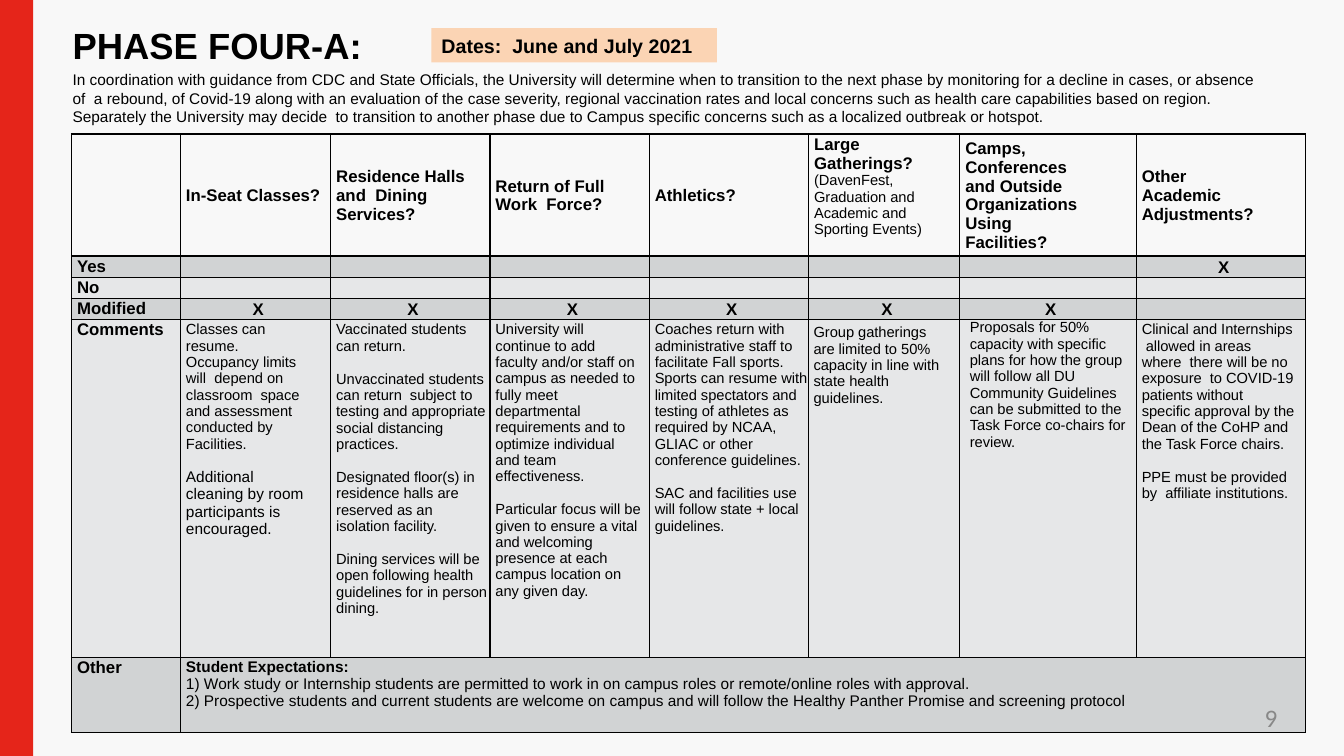
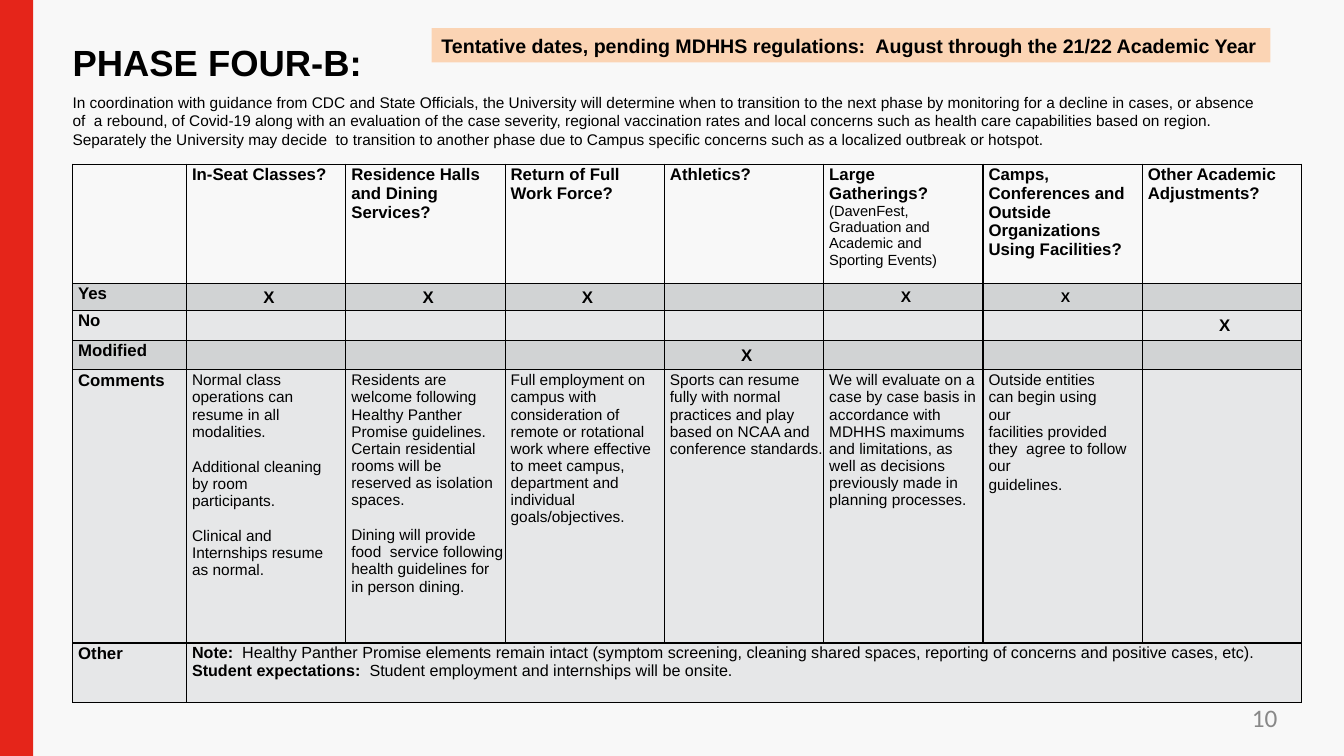
from dataclasses import dataclass

from lxml import etree
from pptx import Presentation
from pptx.dml.color import RGBColor
from pptx.enum import shapes, text
from pptx.oxml.ns import qn
from pptx.util import Inches, Pt


# ---- Theme ----
@dataclass(frozen=True)
class Theme:
    font: str = "Arial"
    number_font: str = "Calibri"
    ink: str = "000000"
    paper: str = "F8F8F8"
    band: str = "E5251A"
    chip: str = "FBD4B4"
    dark: str = "D1D3D4"
    light: str = "E6E7E8"
    grey: str = "888888"
    title: float = 26
    number: float = 18
    date: float = 14
    head: float = 12
    body: float = 11
    small: float = 10.5


T = Theme()
LEFT = text.PP_ALIGN.LEFT
CENTER = text.PP_ALIGN.CENTER
TOP = text.MSO_ANCHOR.TOP
MIDDLE = text.MSO_ANCHOR.MIDDLE


@dataclass
class Para:
    """A paragraph with an optional bold lead; right is its right indent in inches."""
    text: str
    size: float = T.body
    bold: bool = False
    lead: str = ""
    lead_size: float = T.head
    right: float = 0
    before: float = 0
    align: int = LEFT


def head(words, right=0):
    return Para(words, T.head, True, right=right)


def small(words, right=0, before=0):
    return Para(words, T.small, right=right, before=before)


def add_run(p, words, size, bold=False, font=T.font, color=T.ink):
    r = p.add_run()
    r.text = words
    r.font.name, r.font.size, r.font.bold = font, Pt(size), bold
    r.font.color.rgb = RGBColor.from_string(color)


def write(tf, paras, **fmt):
    for i, para in enumerate(paras):
        p = tf.paragraphs[0] if i == 0 else tf.add_paragraph()
        p.alignment = para.align
        p.space_before = Pt(para.before)
        if para.right:
            p._p.get_or_add_pPr().set("marR", str(Inches(para.right)))
        if para.lead:
            add_run(p, para.lead, para.lead_size, True, **fmt)
        add_run(p, para.text, para.size, para.bold, **fmt)


def set_margins(box, left=0, top=0.01, right=0, bottom=0):
    box.margin_left, box.margin_top = Inches(left), Inches(top)
    box.margin_right, box.margin_bottom = Inches(right), Inches(bottom)


def add_borders(cell):
    tc_pr = cell._tc.get_or_add_tcPr()
    for side in ("a:lnL", "a:lnR", "a:lnT", "a:lnB"):
        ln = etree.SubElement(tc_pr, qn(side), w=str(Pt(1)))
        fill = etree.SubElement(ln, qn("a:solidFill"))
        etree.SubElement(fill, qn("a:srgbClr"), val=T.ink)


# ---- Slide builder ----
class Deck:
    def __init__(self):
        self.prs = Presentation()
        self.prs.slide_width, self.prs.slide_height = Inches(13.33), Inches(7.5)

    def new_slide(self):
        self.s = self.prs.slides.add_slide(self.prs.slide_layouts[5])
        fill = self.s.background.fill
        fill.solid()
        fill.fore_color.rgb = RGBColor.from_string(T.paper)
        self.rect(0, 0, 0.33, 7.5, T.band)

    def rect(self, x, y, w, h, color):
        sp = self.s.shapes.add_shape(shapes.MSO_SHAPE.RECTANGLE,
                                     Inches(x), Inches(y), Inches(w), Inches(h))
        sp.shadow.inherit = False
        sp.fill.solid()
        sp.fill.fore_color.rgb = RGBColor.from_string(color)
        sp.line.fill.background()
        return sp

    def title(self, words, y, w):
        sp = self.s.shapes.title
        sp.left, sp.top = Inches(0.71), Inches(y)
        sp.width, sp.height = Inches(w), Inches(0.46)
        tf = sp.text_frame
        set_margins(tf, left=0.01)
        tf.vertical_anchor = TOP
        tf.auto_size = text.MSO_AUTO_SIZE.NONE
        write(tf, [Para(words, T.title, True)])

    def textbox(self, x, y, w, h, para, left=0.01, top=0.01, **fmt):
        tf = self.s.shapes.add_textbox(Inches(x), Inches(y), Inches(w), Inches(h)).text_frame
        tf.word_wrap = True
        set_margins(tf, left=left, top=top)
        write(tf, [para], **fmt)

    def date_chip(self, words, w):
        tf = self.rect(4.28, 0.28, w, 0.34, T.chip).text_frame
        set_margins(tf, 0.1, 0.05, 0.1, 0.05)
        tf.vertical_anchor = MIDDLE
        write(tf, [Para(words, T.date, True)])

    def page_number(self, n):
        self.textbox(9.6, 6.97, 3.07, 0.38,
                     Para(str(n), T.number, align=text.PP_ALIGN.RIGHT),
                     left=0, top=0, font=T.number_font, color=T.grey)

    def cell(self, cell, paras, color, anchor=TOP, top=0.01):
        set_margins(cell, left=0.055, top=top)
        cell.vertical_anchor = anchor
        add_borders(cell)
        cell.fill.solid()
        cell.fill.fore_color.rgb = RGBColor.from_string(color)
        if paras:
            write(cell.text_frame, paras)
        else:
            etree.SubElement(cell.text_frame.paragraphs[0]._p,
                             qn("a:endParaRPr"), sz="600")

    def phase_table(self, x, y, cols, rows, heads, head_anchor, marks, comments,
                    other, other_fill):
        """marks maps a (row, column) pair to the size of its X."""
        t = self.s.shapes.add_table(len(rows), len(cols), Inches(x), Inches(y),
                                    Inches(sum(cols)), Inches(sum(rows))).table
        t.first_row = t.horz_banding = False
        for col, w in zip(t.columns, cols):
            col.width = Inches(w)
        for row, h in zip(t.rows, rows):
            row.height = Inches(h)
        fills = (T.paper, T.dark, T.light, T.dark, T.light, other_fill)
        labels = ("", "Yes", "No", "Modified", "Comments", "Other")
        for r, (label, color) in enumerate(zip(labels, fills)):
            self.cell(t.cell(r, 0), [head(label)] if label else [], color)
            for c in range(1, len(cols)):
                paras, anchor, top = [], TOP, 0.01
                if r == 0:
                    paras, anchor = heads[c - 1], head_anchor
                elif r == 4:
                    paras, top = comments[c - 1], 0.02
                elif r == 5 and c == 1:
                    paras = other
                elif (r, c) in marks:
                    paras = [Para("X", marks[r, c], True, align=CENTER)]
                    anchor = MIDDLE
                self.cell(t.cell(r, c), paras, color, anchor, top)
        t.cell(5, 1).merge(t.cell(5, len(cols) - 1))
        return t


# ---- Shared wording ----
INTRO = ("In coordination with guidance from CDC and State Officials, the University will "
         "determine when to transition to the next phase by monitoring for a decline in cases, "
         "or absence of  a rebound, of Covid-19 along with an evaluation of the case severity, "
         "regional vaccination rates and local concerns such as health care capabilities based "
         "on region. Separately the University may decide  to transition to another phase due "
         "to Campus specific concerns such as a localized outbreak or hotspot.")
GATHERINGS = [Para("(DavenFest, Graduation and Academic and Sporting Events)", T.small,
                   lead="Large Gatherings? ", right=0.2)]
GAP, SMALL_GAP = 12.6, 12


def phase_slide(d, name, title_y, title_w, intro_y, dates, chip_w, number, table):
    d.new_slide()
    d.title(name, title_y, title_w)
    d.textbox(0.71, intro_y, 11.9, 0.58, Para(INTRO))
    t = d.phase_table(**table)
    d.page_number(number)
    d.date_chip(dates, chip_w)
    return t


def phase_four_a(d):
    t = phase_slide(
        d, "PHASE FOUR-A:", 0.22, 3.25, 0.69, "Dates:  June and July 2021", 2.83, 9,
        dict(
            x=0.71, y=1.33, cols=[1.08, 1.49, 1.58, 1.58, 1.58, 1.5, 1.75, 1.68],
            rows=[1.2, 0.21, 0.21, 0.21, 3.35, 0.75], head_anchor=MIDDLE,
            heads=[
                [head("In-Seat Classes?")],
                [head("Residence Halls and  Dining Services?")],
                [head("Return of Full Work  Force?")],
                [head("Athletics?")],
                GATHERINGS,
                [head("Camps, Conferences and Outside", 0.4),
                 head("Organizations Using  Facilities?")],
                [head("Other Academic Adjustments?", 0.45)]],
            marks={(1, 7): T.head, **{(3, c): T.head for c in range(1, 7)}},
            comments=[
                [small("Classes can resume.", 0.2),
                 small("Occupancy limits will  depend on classroom  space and assessment "
                       "conducted by Facilities.", 0.2),
                 Para("Additional cleaning by room participants is encouraged.",
                      right=0.2, before=SMALL_GAP)],
                [small("Vaccinated students can return."),
                 small("Unvaccinated students can return  subject to testing and appropriate "
                       "social distancing practices.", before=SMALL_GAP),
                 small("Designated floor(s) in residence halls are reserved as an isolation "
                       "facility.", before=SMALL_GAP),
                 small("Dining services will be open following health guidelines for in "
                       "person dining.", before=SMALL_GAP)],
                [small("University will continue to add faculty and/or staff on campus as "
                       "needed to fully meet departmental requirements and to optimize "
                       "individual and team effectiveness.", 0.08),
                 small("Particular focus will be given to ensure a vital and welcoming "
                       "presence at each campus location on any given day.", 0.08, SMALL_GAP)],
                [small("Coaches return with administrative staff to facilitate Fall sports. "
                       "Sports can resume with limited spectators and testing of athletes as "
                       "required by NCAA, GLIAC or other conference guidelines."),
                 small("SAC and facilities use will follow state + local guidelines.",
                       before=SMALL_GAP)],
                [small("Group gatherings are limited to 50% capacity in line with state "
                       "health guidelines.", 0.1)],
                [small("Proposals for 50% capacity with specific plans for how the group will "
                       "follow all DU Community Guidelines can be submitted to the Task Force "
                       "co-chairs for review.")],
                [small("Clinical and Internships  allowed in areas where  there will be no "
                       "exposure  to COVID-19 patients without specific approval by the Dean "
                       "of the CoHP and the Task Force chairs.", 0.11),
                 small("PPE must be provided by  affiliate institutions.", 0.11, SMALL_GAP)]],
            other=[
                Para("Student Expectations:", bold=True),
                Para("1) Work study or Internship students are permitted to work in on campus "
                     "roles or remote/online roles with approval."),
                Para("2) Prospective students and current students are welcome on campus and "
                     "will follow the Healthy Panther Promise and screening protocol")],
            other_fill=T.dark))
    t.cell(0, 5).vertical_anchor = TOP
    set_margins(t.cell(4, 5), 0.05, 0.05)
    set_margins(t.cell(4, 6), 0.1, 0, 0.1)


def phase_four_b(d):
    phase_slide(
        d, "PHASE FOUR-B:", 0.39, 3.47, 0.91,
        "Tentative dates, pending MDHHS regulations:  August through the 21/22 Academic Year",
        8.32, 10,
        dict(
            x=0.72, y=1.63, cols=[1.13] + [1.58] * 7,
            rows=[1.18, 0.27, 0.3, 0.29, 2.71, 0.59], head_anchor=TOP,
            heads=[
                [head("In-Seat Classes?")],
                [head("Residence Halls and Dining Services?")],
                [head("Return of Full Work Force?")],
                [head("Athletics?")],
                GATHERINGS,
                [head("Camps, Conferences and Outside Organizations Using Facilities?")],
                [head("Other Academic Adjustments?")]],
            marks={(1, 1): T.head, (1, 2): T.head, (1, 3): T.head, (1, 5): 11, (1, 6): 10,
                   (2, 7): T.head, (3, 4): T.head},
            comments=[
                [Para("Normal class operations can resume in all modalities.", right=0.15),
                 Para("Additional cleaning by room participants.", right=0.15, before=GAP),
                 Para("Clinical and", before=GAP),
                 Para("Internships resume as normal.", right=0.15)],
                [Para("Residents are welcome following Healthy Panther Promise guidelines. "
                      "Certain residential rooms will be reserved as isolation spaces."),
                 Para("Dining will provide food  service following health guidelines for in "
                      "person dining.", before=GAP)],
                [Para("Full employment on campus with consideration of remote or rotational "
                      "work where effective to meet campus, department and individual "
                      "goals/objectives.")],
                [Para("Sports can resume fully with normal practices and play based on NCAA "
                      "and conference standards.")],
                [Para("We will evaluate on a case by case basis in accordance with MDHHS "
                      "maximums and limitations, as well as decisions previously made in "
                      "planning processes.")],
                [Para("Outside entities can begin using our", right=0.25),
                 Para("facilities provided they  agree to follow our", right=0.1),
                 Para("guidelines.", before=1)],
                []],
            other=[
                Para("Healthy Panther Promise elements remain intact (symptom screening, "
                     "cleaning shared spaces, reporting of concerns and positive cases, etc).",
                     11.5, lead="Note:  ", lead_size=11.5),
                Para("Student employment and internships will be onsite.",
                     11.5, lead="Student expectations:  ", lead_size=11.5)],
            other_fill=T.light))


def main():
    d = Deck()
    phase_four_a(d)
    phase_four_b(d)
    d.prs.save("out.pptx")


if __name__ == "__main__":
    main()
